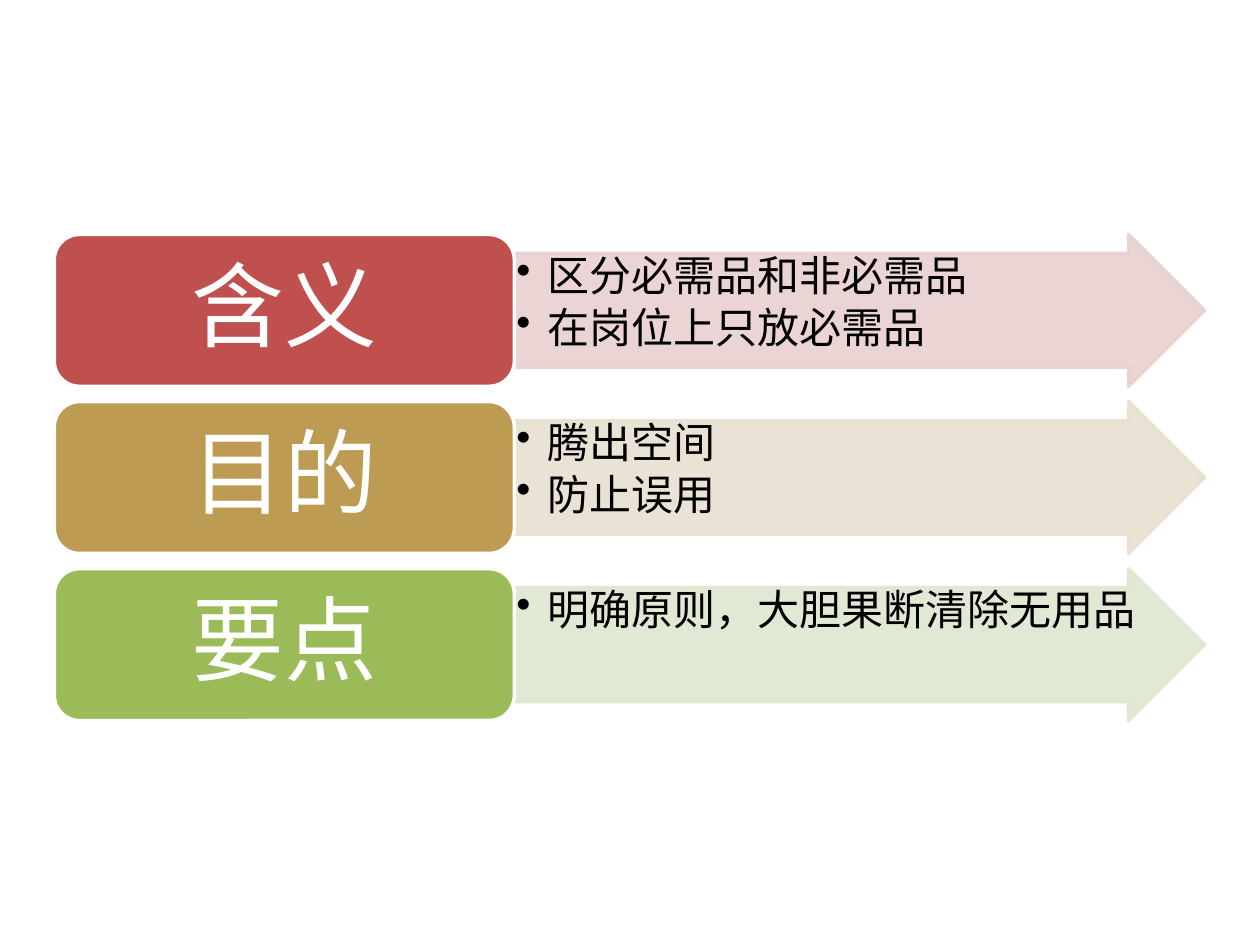
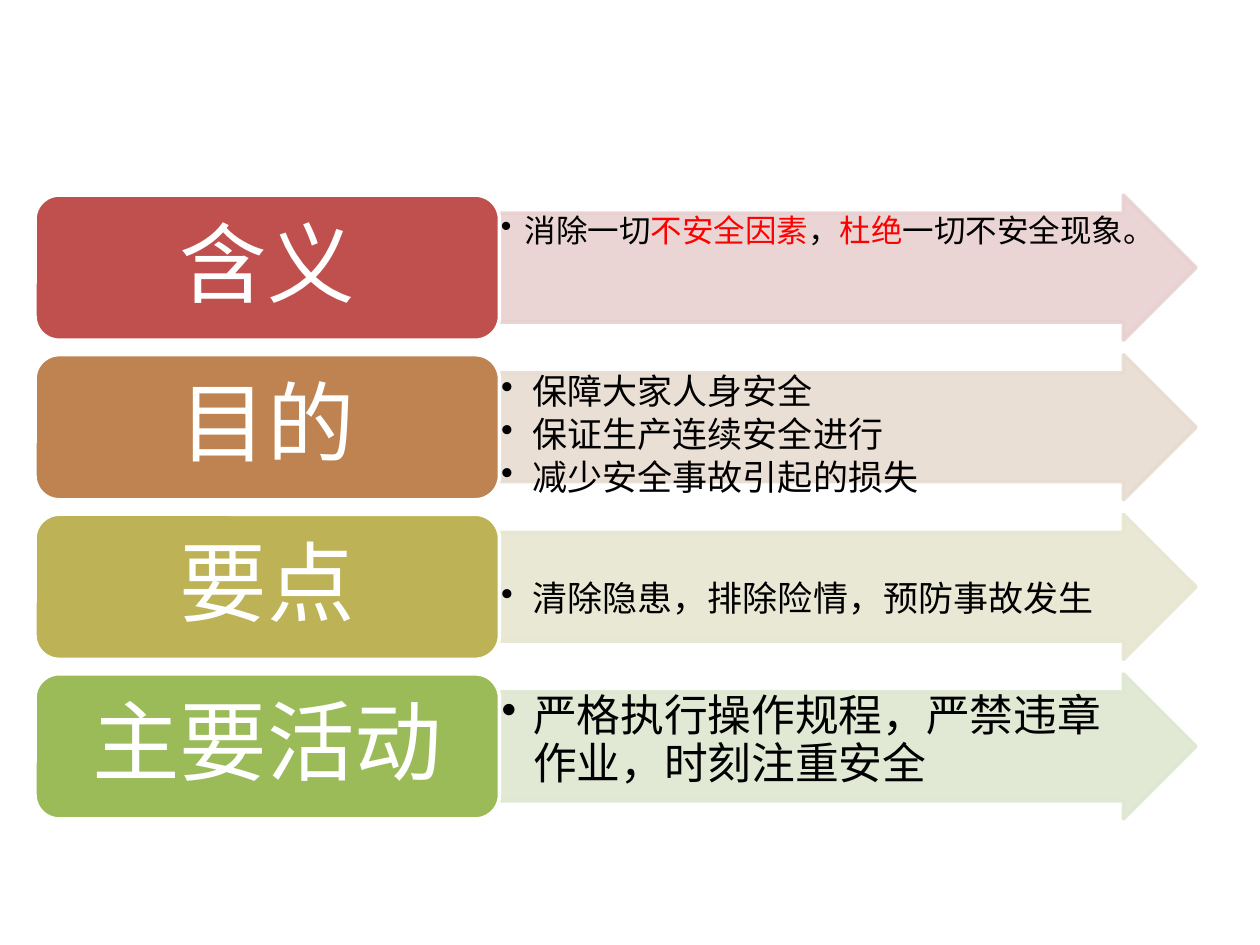
from dataclasses import dataclass

from lxml.etree import SubElement
from pptx import Presentation
from pptx.dml.color import RGBColor as Color
from pptx.enum.shapes import MSO_SHAPE as Shape
from pptx.enum.text import MSO_ANCHOR as Anchor, PP_ALIGN as Align
from pptx.oxml.ns import qn
from pptx.util import Pt


@dataclass(frozen=True)
class Theme:
    """Colours, type and proportions shared by both slides."""
    font: str = "Calibri"
    text: str = "000000"
    accent: str = "FF0000"
    white: str = "FFFFFF"
    red: tuple = ("C0504D", "E8D0D0")
    orange: tuple = ("BE8351", "E8DCD0")
    gold: tuple = ("BD9B53", "E8E1D1")
    olive: tuple = ("BDB255", "E7E6D1")
    green: tuple = ("9BBB59", "DEE7D1")
    small: int = 18
    medium: int = 20
    large: int = 24
    largest: int = 25
    label_large: int = 53
    label_medium: int = 50
    indent: float = 18
    outline: float = 2
    arrow_opacity: int = 90
    label_share: float = 0.4
    gap_share: float = 0.1


THEME = Theme()


@dataclass(frozen=True)
class Row:
    """A label and the points in its arrow; asterisks enclose accented words."""
    label: str
    colours: tuple
    points: tuple
    size: int
    indent: float = THEME.indent
    drop: float = 0


@dataclass(frozen=True)
class Block:
    """Place of a stack of rows, in points, and the size of its labels."""
    left: float
    top: float
    width: float
    row_height: float
    label_size: int


def set_opacity(colour_format, percent):
    """Make a solid colour partly transparent."""
    for solid in colour_format:
        SubElement(solid[0], qn("a:alpha"), val=str(percent * 1000))


def add_box(page, kind, bounds, fill, line, opacity=100):
    """Add a filled, outlined preset shape without a shadow."""
    box = page.shapes.add_shape(kind, *map(Pt, bounds))
    box.shadow.inherit = False
    box.fill.solid()
    box.fill.fore_color.rgb = Color.from_string(fill)
    box.line.color.rgb = Color.from_string(line)
    box.line.width = Pt(THEME.outline)
    if opacity < 100:
        set_opacity(box.element.spPr.iter(qn("a:solidFill")), opacity)
    return box


def set_frame(box, anchor, side, top, bottom):
    """Set wrapping, anchor and insets of a shape's text."""
    frame = box.text_frame
    frame.word_wrap = True
    frame.vertical_anchor = anchor
    frame.margin_left = frame.margin_right = Pt(side)
    frame.margin_top, frame.margin_bottom = Pt(top), Pt(bottom)
    return frame


def set_bullet(para, indent):
    """Give a paragraph a round bullet with a hanging indent."""
    properties = para._p.get_or_add_pPr()
    properties.set("marL", str(Pt(indent)))
    properties.set("indent", str(-Pt(indent)))
    SubElement(properties, qn("a:buChar"), char="•")


def write(para, text, *, size, colour, align, after):
    """Fill a paragraph with text, accenting the words between asterisks."""
    para.alignment = align
    para.line_spacing = 0.9
    para.space_after = Pt(size * after)
    for index, part in enumerate(text.split("*")):
        span = para.add_run()
        span.text = part
        span.font.name = THEME.font
        span.font.size = Pt(size)
        span.font.color.rgb = Color.from_string(THEME.accent if index % 2 else colour)


def add_arrow(page, bounds, row):
    """Add the pale arrow with its bulleted points."""
    pale = row.colours[1]
    box = add_box(page, Shape.RIGHT_ARROW, bounds, pale, pale, THEME.arrow_opacity)
    box.adjustments[0] = 0.75
    inset = row.size * 0.05
    frame = set_frame(box, Anchor.TOP, inset, inset + row.drop, inset)
    for index, point in enumerate(row.points):
        para = frame.add_paragraph() if index else frame.paragraphs[0]
        write(para, point, size=row.size, colour=THEME.text, align=Align.LEFT, after=0.15)
        set_bullet(para, row.indent)


def add_label(page, bounds, row, size):
    """Add the rounded label at the start of a row."""
    box = add_box(page, Shape.ROUNDED_RECTANGLE, bounds, row.colours[0], THEME.white)
    frame = set_frame(box, Anchor.MIDDLE, size * 0.3, size * 0.15, size * 0.15)
    write(frame.paragraphs[0], row.label, size=size, colour=THEME.white,
          align=Align.CENTER, after=0.35)


def add_rows(page, block, rows):
    """Stack the rows at equal gaps, each a label followed by an arrow."""
    label_width = block.width * THEME.label_share
    pitch = block.row_height * (1 + THEME.gap_share)
    for index, row in enumerate(rows):
        top = block.top + index * pitch
        add_arrow(page, (block.left + label_width, top,
                         block.width - label_width, block.row_height), row)
        add_label(page, (block.left, top, label_width, block.row_height),
                  row, block.label_size)


def main():
    """Build both slides and save the deck."""
    deck = Presentation()
    deck.slide_width, deck.slide_height = Pt(720), Pt(540)
    sorting = (
        Row("含义", THEME.red, ("区分必需品和非必需品", "在岗位上只放必需品"), THEME.large),
        Row("目的", THEME.gold, ("腾出空间", "防止误用"), THEME.large),
        Row("要点", THEME.green, ("明确原则，大胆果断清除无用品",), THEME.large),
    )
    safety = (
        Row("含义", THEME.red, ("消除一切*不安全因素*，*杜绝*一切不安全现象。",),
            THEME.small, indent=13.5),
        Row("目的", THEME.orange,
            ("保障大家人身安全", "保证生产连续安全进行", "减少安全事故引起的损失"),
            THEME.medium),
        Row("要点", THEME.olive, ("清除隐患，排除险情，预防事故发生",),
            THEME.medium, drop=27),
        Row("主要活动", THEME.green, ("严格执行操作规程，严禁违章作业，时刻注重安全",),
            THEME.largest),
    )
    slides = (
        (Block(31, 134, 657.3, 86.8, THEME.label_large), sorting),
        (Block(20, 111.5, 663.5, 82.9, THEME.label_medium), safety),
    )
    for block, rows in slides:
        page = deck.slides.add_slide(deck.slide_layouts[6])
        add_rows(page, block, rows)
    deck.save("out.pptx")


if __name__ == "__main__":
    main()
